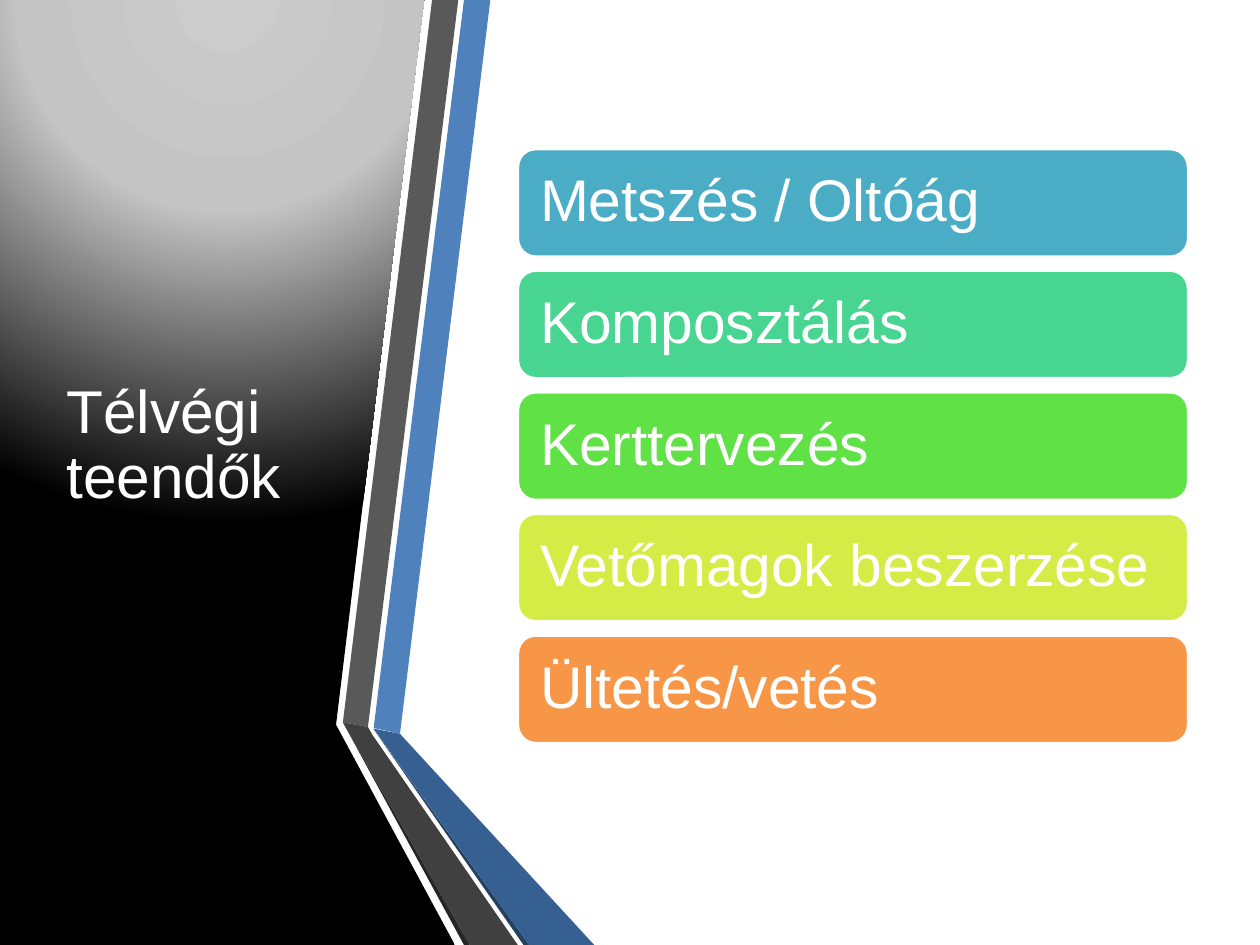
from lxml import etree
from pptx import Presentation
from pptx.dml.color import RGBColor
from pptx.enum import shapes, text
from pptx.oxml import ns
from pptx.util import Pt

WIDTH, HEIGHT = 793.75, 595.25
FONT = "Arial"
COLORS = {
    "white": "FFFFFF", "black": "000000", "light": "CCCCCC", "silver": "C4C4C4",
    "blue": "4F81BD", "deep blue": "376092", "navy": "254061",
    "gray": "595959", "dark gray": "404040", "charcoal": "262626",
    "teal": "4BACC6", "mint": "48D491", "green": "60E146",
    "lime": "D5EC46", "orange": "F79646",
}

TITLE = "Télvégi teendők"
TASKS = [
    ("Metszés / Oltóág", "teal"),
    ("Komposztálás", "mint"),
    ("Kerttervezés", "green"),
    ("Vetőmagok beszerzése", "lime"),
    ("Ültetés/vetés", "orange"),
]

PANEL = [(0, 0), (267.1, 0), (211.7, 456.5), (286.6, HEIGHT), (0, HEIGHT)]
PANEL_STOPS = [(0, "light"), (40, "silver"), (100, "black")]
RIBBONS = [
    ("blue", [(235.4, 458.6), (252, 462.2), (308.9, 0), (292.3, 0)]),
    ("gray", [(288.7, 0), (272.2, 0), (216, 455), (231.8, 457.9)]),
    ("charcoal", [(216, 455), (292.3, HEIGHT), (295.9, HEIGHT)]),
    ("navy", [(235.4, 459.4), (329.8, HEIGHT), (333.4, HEIGHT)]),
    ("deep blue", [(235.4, 459), (333.4, HEIGHT), (374.4, HEIGHT), (252, 462.2)]),
    ("dark gray", [(216, 455), (295.9, HEIGHT), (326.2, HEIGHT), (234.7, 463),
                   (231.8, 457.9)]),
]

TITLE_BOX = (34.6, 59.8, 180.9, 442.8)
BAR_LEFT, BAR_TOP, BAR_WIDTH, BAR_HEIGHT = 326.1, 93.7, 422.6, 68.2
BAR_PITCH = 76.6


def color(name):
    return RGBColor.from_string(COLORS[name])


def write_text(shape, content, size, inset=None, space_after=0):
    frame = shape.text_frame
    frame.text = content
    frame.word_wrap = True
    frame.auto_size = text.MSO_AUTO_SIZE.NONE
    frame.vertical_anchor = text.MSO_ANCHOR.MIDDLE
    if inset is not None:
        frame.margin_left = frame.margin_right = Pt(inset)
        frame.margin_top = frame.margin_bottom = Pt(inset)
    paragraph = frame.paragraphs[0]
    paragraph.alignment = text.PP_ALIGN.LEFT
    paragraph.line_spacing = 0.9
    paragraph.space_before = Pt(0)
    paragraph.space_after = Pt(space_after)
    font = paragraph.runs[0].font
    font.name, font.size = FONT, Pt(size)
    font.color.rgb = color("white")


def add_polygon(slide, points, fill):
    corners = [(Pt(x), Pt(y)) for x, y in points]
    builder = slide.shapes.build_freeform(*corners[0], scale=1.0)
    builder.add_line_segments(corners[1:], close=True)
    polygon = builder.convert_to_shape()
    polygon.shadow.inherit = False
    polygon.fill.solid()
    polygon.fill.fore_color.rgb = color(fill)
    polygon.line.fill.background()
    return polygon


def set_circular_gradient(shape, stops):
    """Replace the solid fill by a gradient centred above the shape."""
    gradient = etree.Element(ns.qn("a:gradFill"), rotWithShape="1")
    stop_list = etree.SubElement(gradient, ns.qn("a:gsLst"))
    for percent, name in stops:
        stop = etree.SubElement(stop_list, ns.qn("a:gs"), pos=str(percent * 1000))
        etree.SubElement(stop, ns.qn("a:srgbClr"), val=COLORS[name])
    circle = etree.SubElement(gradient, ns.qn("a:path"))
    circle.set("path", "circle")
    etree.SubElement(circle, ns.qn("a:fillToRect"),
                     l="50000", t="-80000", r="50000", b="180000")
    solid = shape.element.spPr.find(ns.qn("a:solidFill"))
    solid.getparent().replace(solid, gradient)


def place_title(slide):
    title = slide.shapes.title
    title.left, title.top, title.width, title.height = map(Pt, TITLE_BOX)
    write_text(title, TITLE, 38, space_after=6)
    title.element.getparent().append(title.element)  # bring in front of the panel


def add_task_bar(slide, row, task, fill):
    bar = slide.shapes.add_shape(
        shapes.MSO_SHAPE.ROUNDED_RECTANGLE, Pt(BAR_LEFT),
        Pt(BAR_TOP + row * BAR_PITCH), Pt(BAR_WIDTH), Pt(BAR_HEIGHT))
    bar.shadow.inherit = False
    bar.fill.solid()
    bar.fill.fore_color.rgb = color(fill)
    bar.line.color.rgb = color("white")
    bar.line.width = Pt(2)
    write_text(bar, task, 37, inset=10.8)


def main():
    presentation = Presentation()
    presentation.slide_width, presentation.slide_height = Pt(WIDTH), Pt(HEIGHT)
    slide = presentation.slides.add_slide(presentation.slide_layouts[5])
    set_circular_gradient(add_polygon(slide, PANEL, "black"), PANEL_STOPS)
    for fill, points in RIBBONS:
        add_polygon(slide, points, fill)
    place_title(slide)
    for row, (task, fill) in enumerate(TASKS):
        add_task_bar(slide, row, task, fill)
    presentation.save("out.pptx")


if __name__ == "__main__":
    main()
